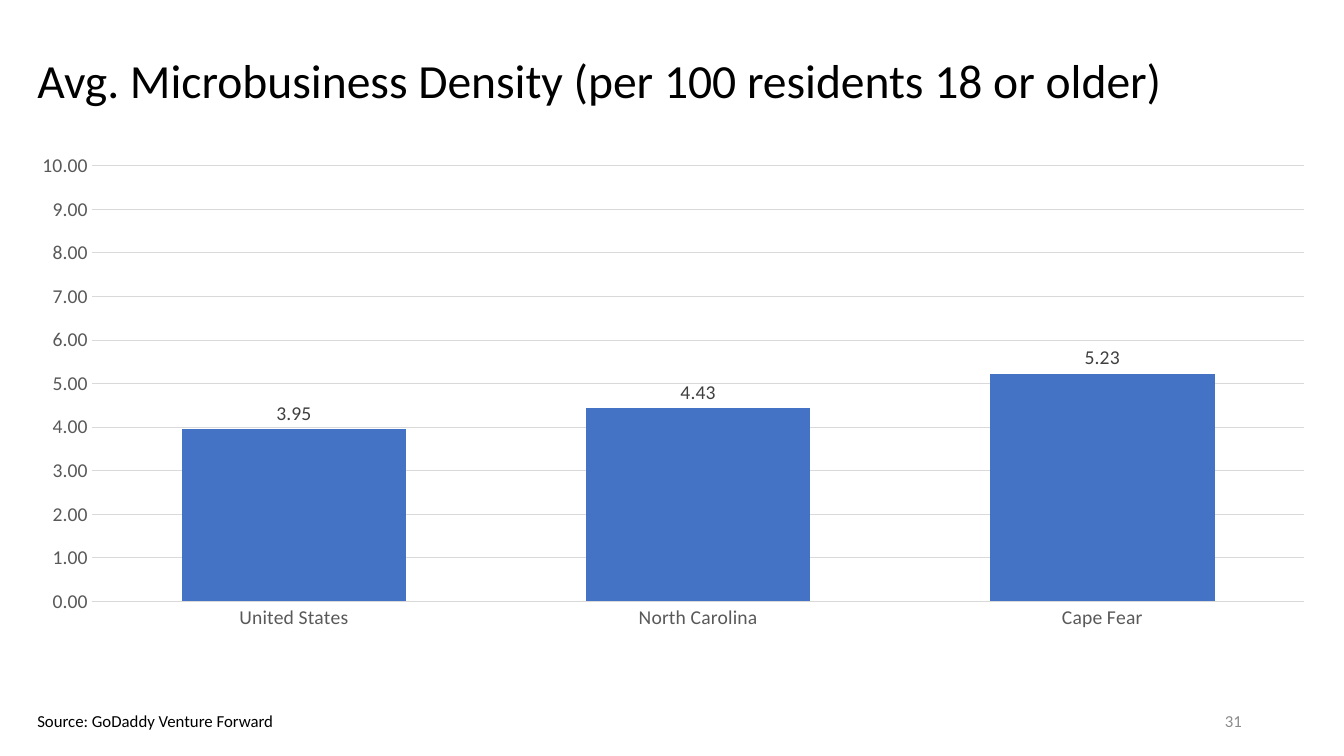
from lxml import etree
from pptx import Presentation
from pptx.chart.data import CategoryChartData
from pptx.dml.color import RGBColor
from pptx.enum.chart import XL_CHART_TYPE, XL_LABEL_POSITION, XL_TICK_MARK
from pptx.enum.text import MSO_ANCHOR, MSO_AUTO_SIZE, PP_ALIGN
from pptx.oxml.ns import qn
from pptx.util import Cm, Pt

COLUMN = XL_CHART_TYPE.COLUMN_CLUSTERED
OUTSIDE = XL_LABEL_POSITION.OUTSIDE_END
NO_TICK = XL_TICK_MARK.NONE
TOP, MIDDLE = MSO_ANCHOR.TOP, MSO_ANCHOR.MIDDLE
LEFT, RIGHT = PP_ALIGN.LEFT, PP_ALIGN.RIGHT
NO_FIT, GROW = MSO_AUTO_SIZE.NONE, MSO_AUTO_SIZE.SHAPE_TO_FIT_TEXT


def color(code):
    """Turn a hex string into a colour."""
    return RGBColor.from_string(code)


class Page:
    """Hold the style and the current slide."""

    face = "Calibri"
    black, gray, pale, blue = "000000", "595959", "D9D9D9", "4472C4"

    def __init__(self, deck):
        """Add a title-only slide."""
        self.slide = deck.slides.add_slide(deck.slide_layouts[5])

    def style(self, font, size, code):
        """Format a font."""
        font.name, font.size = self.face, Pt(size)
        font.color.rgb = color(code)

    def put_text(self, shape, text, size=12, code=black, align=LEFT,
                 anchor=TOP, wrap=True, fit=NO_FIT, space=1.0):
        """Put formatted text in a shape."""
        frame = shape.text_frame
        frame.word_wrap, frame.auto_size = wrap, fit
        frame.vertical_anchor = anchor
        line = frame.paragraphs[0]
        line.alignment, line.line_spacing = align, space
        run = line.add_run()
        run.text = text
        self.style(run.font, size, code)

    def title(self, text, area):
        """Place and fill the title."""
        shape = self.slide.shapes.title
        shape.left, shape.top, shape.width, shape.height = map(Cm, area)
        self.put_text(shape, text, size=34, anchor=MIDDLE, space=0.9)

    def label(self, text, area, **look):
        """Add a text box."""
        box = self.slide.shapes.add_textbox(*map(Cm, area))
        self.put_text(box, text, **look)

    def columns(self, name, values, area, plot):
        """Add a column chart with labelled bars."""
        data = CategoryChartData(number_format="0.00")
        data.categories = values.keys()
        data.add_series(name, values.values())
        chart = self.slide.shapes.add_chart(COLUMN, *map(Cm, area), data).chart
        chart.has_legend = chart.has_title = False
        self.style(chart.font, 14, self.black)
        bars = chart.plots[0]
        bars.gap_width, bars.vary_by_categories = 80, False
        fill = bars.series[0].format.fill
        fill.solid()
        fill.fore_color.rgb = color(self.blue)
        bars.has_data_labels = True
        marks = bars.data_labels
        marks.show_value, marks.position = True, OUTSIDE
        marks.number_format, marks.number_format_is_linked = "0.00", False
        self.style(marks.font, 14, "404040")
        self.axes(chart)
        self.inner(chart, plot)

    def axes(self, chart):
        """Format both axes and the grid."""
        base, scale = chart.category_axis, chart.value_axis
        for axis in (base, scale):
            axis.major_tick_mark = axis.minor_tick_mark = NO_TICK
            self.style(axis.tick_labels.font, 14, self.gray)
        scale.minimum_scale, scale.maximum_scale, scale.major_unit = 0, 10, 1
        scale.tick_labels.number_format = "0.00"
        scale.tick_labels.number_format_is_linked = False
        scale.format.line.fill.background()
        for line in (base.format.line, scale.major_gridlines.format.line):
            line.color.rgb, line.width = color(self.pale), Pt(0.75)

    def inner(self, chart, plot):
        """Fix the inner plot area as shares of the chart."""
        area = chart.element.find(".//" + qn("c:plotArea"))
        for old in area.findall(qn("c:layout")):
            area.remove(old)
        layout = etree.Element(qn("c:layout"))
        area.insert(0, layout)
        manual = etree.SubElement(layout, qn("c:manualLayout"))
        parts = [("layoutTarget", "inner"), ("xMode", "edge"), ("yMode", "edge")]
        for tag, value in parts + list(zip("xywh", plot)):
            etree.SubElement(manual, qn("c:" + tag)).set("val", str(value))


def main():
    """Build and save the slide."""
    deck = Presentation()
    deck.slide_width, deck.slide_height = Cm(33.87), Cm(19.05)
    page = Page(deck)
    page.title("Avg. Microbusiness Density (per 100 residents 18 or older)",
               (0.69, 0.51, 32.41, 3.15))
    page.label("31", (23.93, 17.65, 7.62, 1.02), code="8C8C8C",
               align=RIGHT, anchor=MIDDLE)
    page.label("Source: GoDaddy Venture Forward", (0.69, 17.78, 6.73, 0.76),
               wrap=False, fit=GROW)
    density = {"United States": 3.95, "North Carolina": 4.43, "Cape Fear": 5.23}
    page.columns("Series 1", density, (0.69, 3.63, 32.51, 13.72),
                 (0.05, 0.04, 0.94, 0.8))
    deck.save("out.pptx")


if __name__ == "__main__":
    main()
